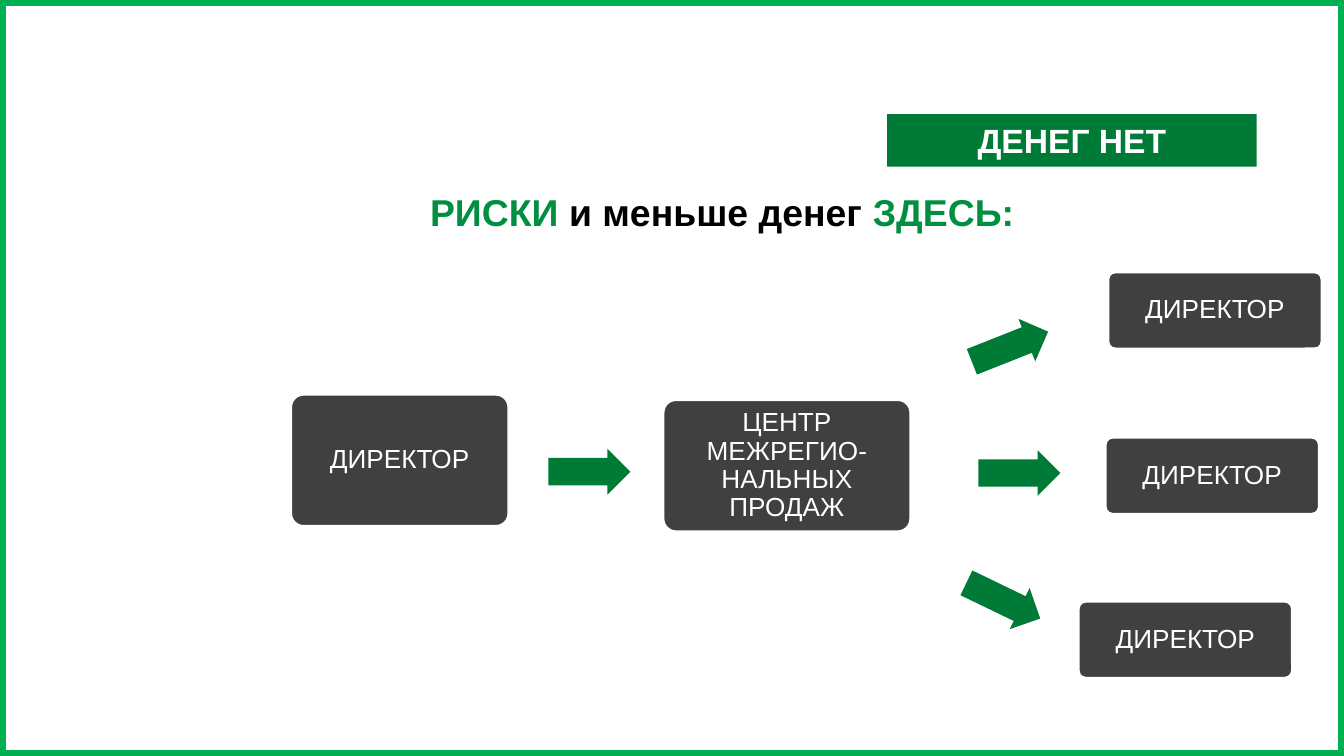
from pptx import Presentation
from pptx.dml.color import RGBColor
from pptx.enum.shapes import MSO_SHAPE
from pptx.enum.text import MSO_ANCHOR, PP_ALIGN
from pptx.util import Inches, Pt

GREEN = "007A37"
WHITE = "FFFFFF"


def rgb(value):
    return RGBColor.from_string(value)


def add_shape(kind, left, top, width, height, fill=None, line=None, weight=0):
    sp = s.shapes.add_shape(kind, Inches(left), Inches(top), Inches(width), Inches(height))
    sp.shadow.inherit = False
    if fill:
        sp.fill.solid()
        sp.fill.fore_color.rgb = rgb(fill)
    else:
        sp.fill.background()
    if line:
        sp.line.color.rgb = rgb(line)
        sp.line.width = Pt(weight)
    else:
        sp.line.fill.background()
    return sp


prs = Presentation()
prs.slide_width = Inches(10)
prs.slide_height = Inches(10) * 9 // 16
s = prs.slides.add_slide(prs.slide_layouts[5])

title = s.shapes.title
title.left, title.top = Inches(3.1), Inches(1.36)
title.width, title.height = Inches(5.67), Inches(0.44)
tf = title.text_frame
tf.word_wrap = True
tf.vertical_anchor = MSO_ANCHOR.TOP
p = tf.paragraphs[0]
p.alignment = PP_ALIGN.LEFT
for text, color in [("РИСКИ ", "008E40"), ("и меньше денег ", "000000"), ("ЗДЕСЬ:", "008E40")]:
    r = p.add_run()
    r.text = text
    r.font.name = "Arial"
    r.font.size = Pt(20)
    r.font.bold = True
    r.font.color.rgb = rgb(color)

banner = add_shape(MSO_SHAPE.RECTANGLE, 6.6, 0.85, 2.75, 0.39, GREEN)
tf = banner.text_frame
tf.text = "ДЕНЕГ НЕТ"
tf.word_wrap = False
tf.vertical_anchor = MSO_ANCHOR.MIDDLE
p = tf.paragraphs[0]
p.alignment = PP_ALIGN.CENTER
r = p.runs[0]
r.font.name = "Arial"
r.font.size = Pt(18)
r.font.bold = True
r.font.color.rgb = rgb(WHITE)

boxes = [
    ("ДИРЕКТОР", 8.24, 2.02, 1.6, 0.58),
    ("ДИРЕКТОР", 8.22, 3.25, 1.6, 0.58),
    ("ДИРЕКТОР", 8.02, 4.47, 1.6, 0.58),
    ("ЦЕНТР МЕЖРЕГИО-НАЛЬНЫХ ПРОДАЖ", 4.93, 2.97, 1.85, 0.99),
    ("ДИРЕКТОР", 2.16, 2.93, 1.63, 0.99),
]
for text, left, top, width, height in boxes:
    sp = add_shape(MSO_SHAPE.ROUNDED_RECTANGLE, left, top, width, height, "404040", WHITE, 2)
    sp.adjustments[0] = 0.1
    tf = sp.text_frame
    tf.text = text
    tf.word_wrap = True
    tf.vertical_anchor = MSO_ANCHOR.MIDDLE
    tf.margin_left = tf.margin_right = tf.margin_top = tf.margin_bottom = Inches(0.08)
    p = tf.paragraphs[0]
    p.alignment = PP_ALIGN.CENTER
    p.line_spacing = 0.9
    r = p.runs[0]
    r.font.name = "Arial"
    r.font.size = Pt(14)
    r.font.color.rgb = rgb(WHITE)

arrows = [(4.08, 3.34, 0), (7.28, 3.35, 0), (7.21, 2.41, 338.4), (7.16, 4.3, 25.8)]
for left, top, angle in arrows:
    sp = add_shape(MSO_SHAPE.RIGHT_ARROW, left, top, 0.61, 0.34, GREEN)
    sp.adjustments[0] = 0.6
    sp.adjustments[1] = 0.5
    sp.rotation = angle

frame = add_shape(MSO_SHAPE.RECTANGLE, 0, 0, 10, 5.62, line="00B050", weight=6)
frame.height = prs.slide_height

prs.save("out.pptx")
